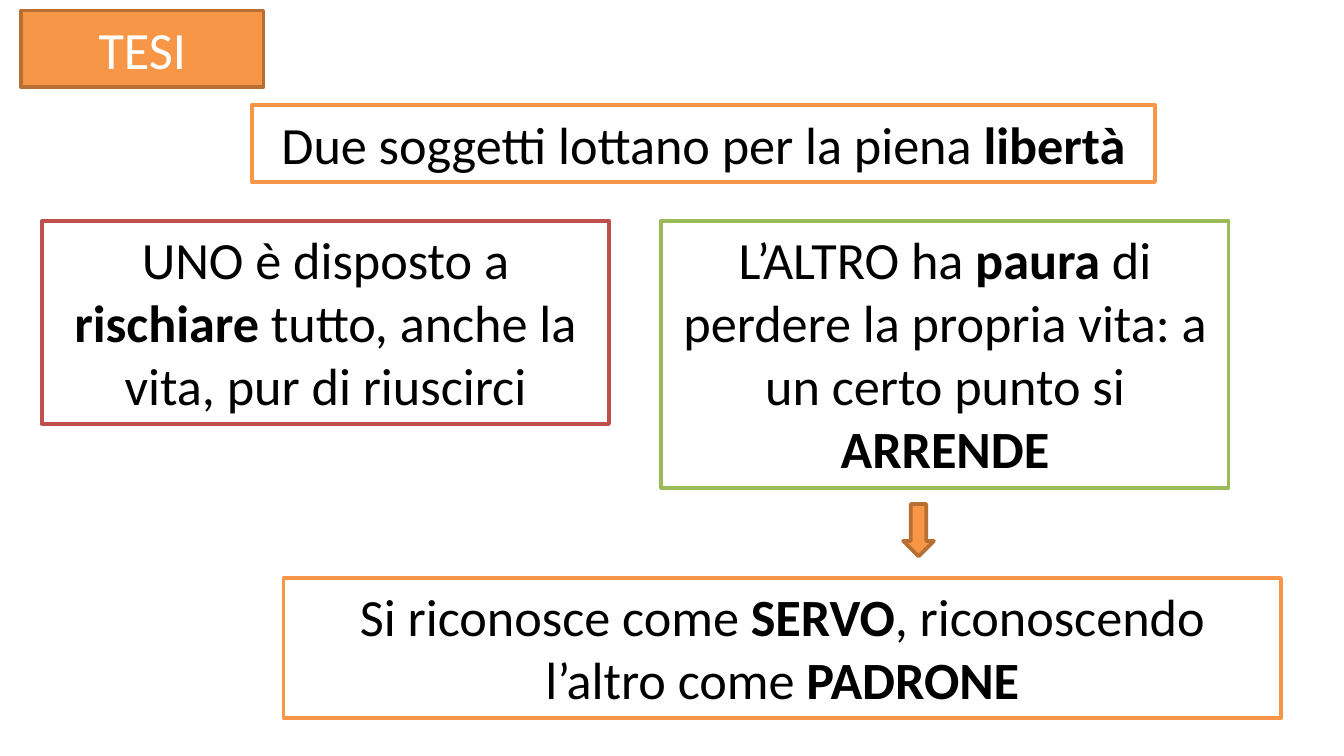
from pptx import Presentation
from pptx import util as u
from pptx.dml.color import RGBColor
from pptx.enum import shapes, text

ORANGE, DARK_ORANGE, RED, GREEN = "F79646", "B76F34", "C0504D", "9BBB59"
WHITE, BLACK = "FFFFFF", "000000"


def color(value):
    """Turn a hex string into a colour."""
    return RGBColor.from_string(value)


def add_outlined(slide, kind, place, fill, outline):
    """Add a filled preset shape with a 2 pt outline, placed in centimetres."""
    figure = slide.shapes.add_shape(kind, *(u.Cm(length) for length in place))
    figure.shadow.inherit = False
    figure.fill.solid()
    figure.fill.fore_color.rgb = color(fill)
    figure.line.color.rgb = color(outline)
    figure.line.width = u.Pt(2)
    return figure


def add_statement(slide, place, wording, outline, fill=WHITE, ink=BLACK):
    """Add a centred statement box; every second piece of wording is bold."""
    box = add_outlined(slide, shapes.MSO_SHAPE.RECTANGLE, place, fill, outline)
    frame_format = {
        "word_wrap": True,
        "auto_size": text.MSO_AUTO_SIZE.SHAPE_TO_FIT_TEXT,
        "vertical_anchor": text.MSO_ANCHOR.TOP,
    }
    for name, value in frame_format.items():
        setattr(box.text_frame, name, value)
    sentence = box.text_frame.paragraphs[0]
    sentence.alignment = text.PP_ALIGN.CENTER
    for index, words in enumerate(wording):
        piece = sentence.add_run()
        piece.text = words
        font_format = {"name": "Calibri", "size": u.Pt(28), "bold": index % 2 == 1}
        for name, value in font_format.items():
            setattr(piece.font, name, value)
        piece.font.color.rgb = color(ink)


def main():
    """Build the thesis slide and save it."""
    deck = Presentation()
    deck.slide_width, deck.slide_height = u.Cm(25.4), u.Cm(14.28)
    slide = deck.slides.add_slide(deck.slide_layouts[6])

    line_height, rival_top, rival_width = 1.45, 4.17, 10.72
    add_statement(slide, (0.4, 0.2, 4.58, line_height), ["TESI"],
                  DARK_ORANGE, ORANGE, WHITE)
    add_statement(slide, (4.76, 1.99, 17.07, line_height),
                  ["Due soggetti lottano per la piena ", "libertà"], ORANGE)
    add_statement(slide, (0.79, rival_top, rival_width, 3.84),
                  ["UNO è disposto a ", "rischiare",
                   " tutto, anche la vita, pur di riuscirci"], RED)
    add_statement(slide, (12.5, rival_top, rival_width, 5.05),
                  ["L’ALTRO ha ", "paura",
                   " di perdere la propria vita: a un certo punto si ",
                   "ARRENDE"], GREEN)
    add_statement(slide, (5.36, 10.92, 18.85, 2.64),
                  ["Si riconosce come ", "SERVO",
                   ", riconoscendo l’altro come ", "PADRONE"], ORANGE)
    add_outlined(slide, shapes.MSO_SHAPE.DOWN_ARROW,
                 (17.07, 9.52, 0.58, 0.99), ORANGE, DARK_ORANGE)
    deck.save("out.pptx")


if __name__ == "__main__":
    main()
